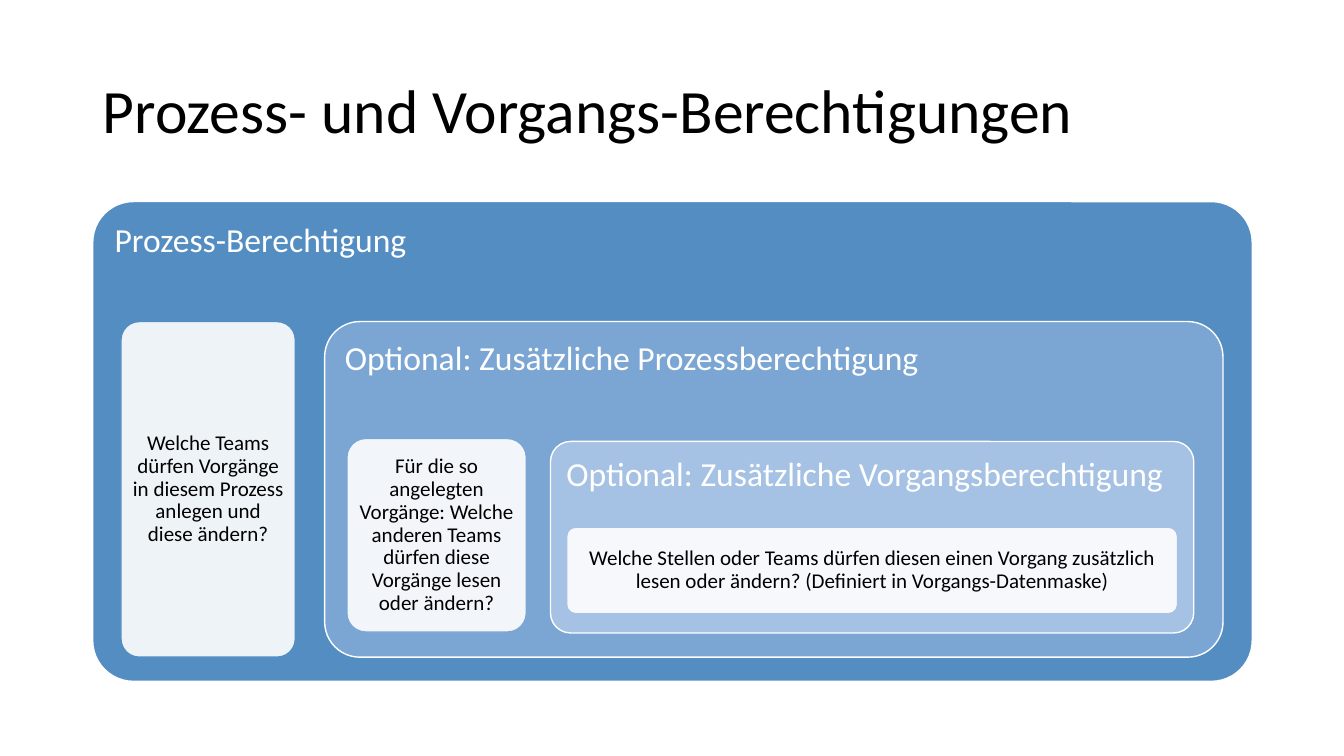
from lxml import etree
from pptx import Presentation
from pptx.dml.color import RGBColor
from pptx.enum.shapes import MSO_SHAPE
from pptx.enum.text import MSO_ANCHOR, MSO_AUTO_SIZE, PP_ALIGN
from pptx.oxml.ns import qn
from pptx.util import Inches, Pt

ROUNDED = MSO_SHAPE.ROUNDED_RECTANGLE
TOP, MIDDLE = MSO_ANCHOR.TOP, MSO_ANCHOR.MIDDLE
LEFT, CENTER = PP_ALIGN.LEFT, PP_ALIGN.CENTER
NO_FIT = MSO_AUTO_SIZE.NONE

COLORS = {
    "white": "FFFFFF",
    "black": "000000",
    "process": "538DC1",
    "extra": "7BA6D3",
    "case": "A5C1E3",
}

LEVELS = [
    ("process", "Prozess-Berechtigung", (0.92, 2, 11.5, 4.76), 0.085,
     "Welche Teams dürfen Vorgänge in diesem Prozess anlegen und diese ändern?",
     (1.2, 3.19, 1.73, 3.33)),
    ("extra", "Optional: Zusätzliche Prozessberechtigung", (3.22, 3.19, 8.91, 3.33), 0.105,
     "Für die so angelegten Vorgänge: Welche anderen Teams dürfen diese Vorgänge lesen oder ändern?",
     (3.44, 4.35, 1.78, 1.92)),
    ("case", "Optional: Zusätzliche Vorgangsberechtigung", (5.46, 4.38, 6.38, 1.9), 0.105,
     "Welche Stellen oder Teams dürfen diesen einen Vorgang zusätzlich lesen oder ändern? "
     "(Definiert in Vorgangs-Datenmaske)",
     (5.62, 5.23, 6.06, 0.86)),
]


def rgb(name):
    return RGBColor.from_string(COLORS[name])


def write_text(tf, text, size, color, font="Calibri", align=LEFT, anchor=TOP, inset=0.1):
    tf.word_wrap = True
    tf.auto_size = NO_FIT
    tf.vertical_anchor = anchor
    tf.margin_left = tf.margin_right = Inches(inset)
    tf.margin_top = tf.margin_bottom = Inches(inset)
    p = tf.paragraphs[0]
    p.alignment = align
    p.line_spacing = 0.9
    p.space_before = Pt(0)
    r = p.add_run()
    r.text = text
    r.font.name = font
    r.font.size = Pt(size)
    r.font.color.rgb = rgb(color)


class SlideBuilder:
    def __init__(self, prs):
        self.s = prs.slides.add_slide(prs.slide_layouts[5])
        self.group = self.s.shapes.add_group_shape()

    def title(self, text, box):
        sp = self.s.shapes.title
        sp.left, sp.top, sp.width, sp.height = map(Inches, box)
        write_text(sp.text_frame, text, 44, "black", anchor=MIDDLE)

    def rounded(self, box, radius, fill, line, opacity=100):
        sp = self.group.shapes.add_shape(ROUNDED, *map(Inches, box))
        sp.adjustments[0] = radius
        sp.shadow.inherit = False
        sp.fill.solid()
        sp.fill.fore_color.rgb = rgb(fill)
        sp.line.color.rgb = rgb(line)
        sp.line.width = Pt(1)
        if opacity < 100:
            color = sp.fill._xPr.find(qn("a:solidFill"))[0]
            etree.SubElement(color, qn("a:alpha"), val=str(opacity * 1000))
        return sp

    def level(self, text, box, radius, fill):
        sp = self.rounded(box, radius, fill, "white")
        write_text(sp.text_frame, text, 24, "white")

    def question(self, text, box, line):
        sp = self.rounded(box, 0.105, "white", line, opacity=90)
        write_text(sp.text_frame, text, 15, "black", align=CENTER, anchor=MIDDLE, inset=0.06)


def main():
    prs = Presentation()
    prs.slide_width, prs.slide_height = Inches(13.33), Inches(7.5)
    slide = SlideBuilder(prs)
    slide.title("Prozess- und Vorgangs-Berechtigungen", (0.92, 0.4, 11.5, 1.45))
    for color, heading, box, radius, question, question_box in LEVELS:
        slide.level(heading, box, radius, color)
        slide.question(question, question_box, color)
    prs.save("out.pptx")


if __name__ == "__main__":
    main()
